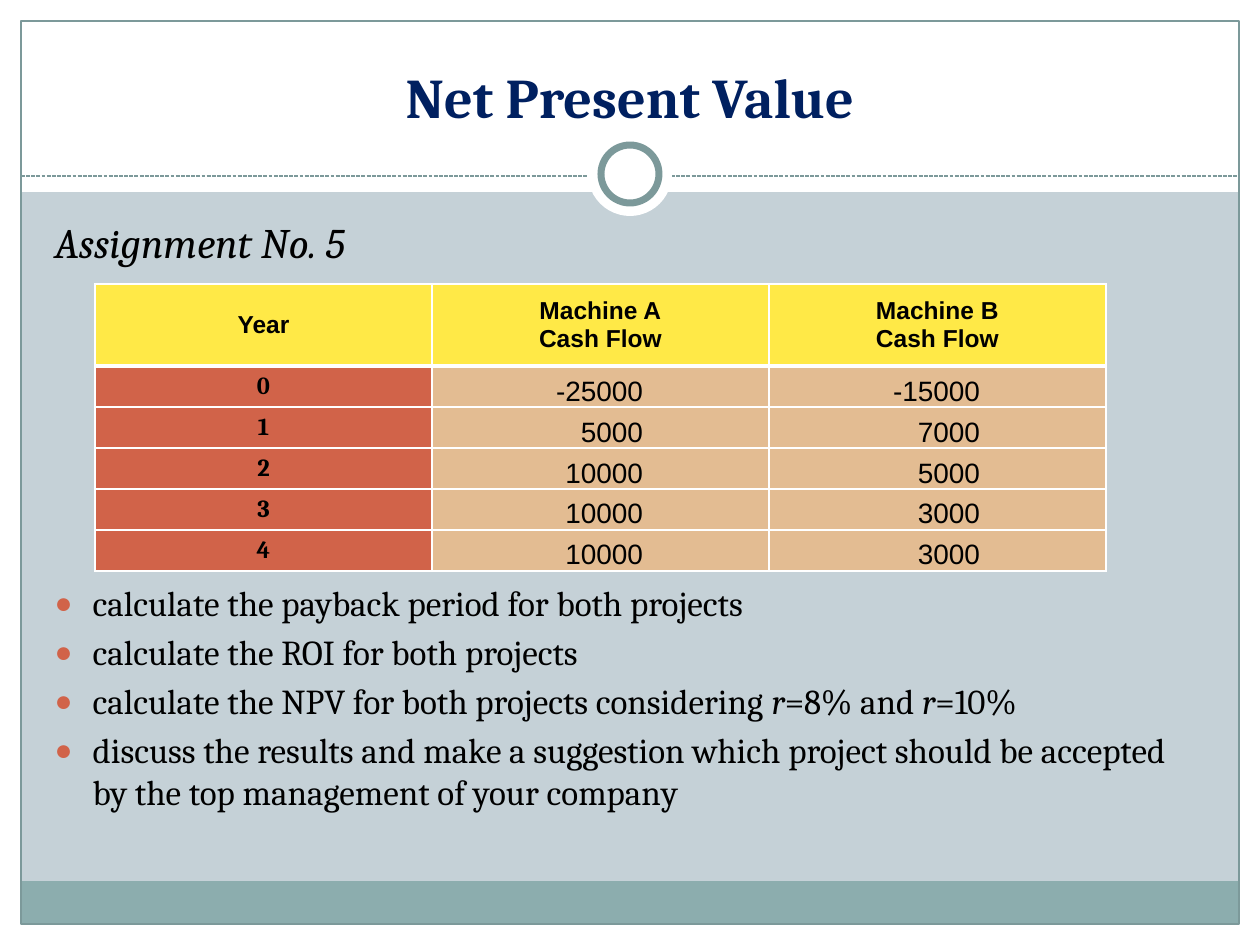
from lxml import etree
from pptx import Presentation
from pptx.dml.color import RGBColor
from pptx.enum.dml import MSO_LINE
from pptx.enum.shapes import MSO_CONNECTOR, MSO_SHAPE
from pptx.enum.text import MSO_ANCHOR, MSO_AUTO_SIZE, PP_ALIGN
from pptx.oxml.ns import qn
from pptx.util import Emu, Pt

RECTANGLE, ELLIPSE = MSO_SHAPE.RECTANGLE, MSO_SHAPE.OVAL
STRAIGHT, DASH = MSO_CONNECTOR.STRAIGHT, MSO_LINE.SQUARE_DOT
MIDDLE, BOTTOM = MSO_ANCHOR.MIDDLE, MSO_ANCHOR.BOTTOM
CENTER, RIGHT = PP_ALIGN.CENTER, PP_ALIGN.RIGHT
NO_FIT = MSO_AUTO_SIZE.NONE

PX_PER_INCH = 126
PAGE_W, PAGE_H = 1260, 945
SERIF, SANS = "Cambria", "Arial"
COLORS = {
    "page": "C5D1D7", "white": "FFFFFF", "footer": "8CADAE", "line": "7C999A",
    "title": "002060", "text": "000000", "accent": "D16349",
    "header": "FFE947", "value": "E3BC92",
}
HEADERS = [["Year"], ["Machine A", "Cash Flow"], ["Machine B", "Cash Flow"]]
CASH_FLOWS = [
    ("0", "-25000", "-15000"),
    ("1", "5000", "7000"),
    ("2", "10000", "5000"),
    ("3", "10000", "3000"),
    ("4", "10000", "3000"),
]
# Each task is a list of (text, italic) spans
TASKS = [
    [("calculate the payback period for both projects", False)],
    [("calculate the ROI for both projects", False)],
    [("calculate the NPV for both projects considering ", False), ("r", True),
     ("=8% and ", False), ("r", True), ("=10%", False)],
    [("discuss the results and make a suggestion which project should be "
      "accepted by the top management of your company", False)],
]


def px(length):
    return Emu(round(length * 914400 / PX_PER_INCH))


def color(name):
    return RGBColor.from_string(COLORS[name])


def add_span(para, text, size, font=SERIF, shade="text", bold=False, italic=False):
    span = para.add_run()
    span.text = text
    span.font.size = Pt(size)
    span.font.name = font
    span.font.color.rgb = color(shade)
    span.font.bold = bold
    span.font.italic = italic


def add_block(page, kind, box, fill=None, line_width=None):
    block = page.shapes.add_shape(kind, *map(px, box))
    block.shadow.inherit = False
    if fill:
        block.fill.solid()
        block.fill.fore_color.rgb = color(fill)
    else:
        block.fill.background()
    if line_width:
        block.line.color.rgb = color("line")
        block.line.width = Pt(line_width)
    else:
        block.line.fill.background()


def place(holder, box):
    """Move a placeholder to the box and in front of the decoration."""
    holder.left, holder.top, holder.width, holder.height = map(px, box)
    holder.element.getparent().append(holder.element)
    frame = holder.text_frame
    frame.word_wrap = True
    frame.auto_size = NO_FIT
    return frame


def add_decoration(page, box):
    left, top, width, height = box
    margin, band, rule_y = 21, 43, 176
    inner_w, inner_h = width - 2 * margin, height - 2 * margin
    right, bottom = left + width - margin, top + height - margin
    # White margins and title area
    for part in [(left, bottom, width, margin), (left, top, width, 192),
                 (left, top, margin, height), (right, top, margin, height)]:
        add_block(page, RECTANGLE, part, "white")
    # Footer band and outer frame
    add_block(page, RECTANGLE, (left + margin, bottom - band, inner_w, band), "footer")
    add_block(page, RECTANGLE, (left + margin, top + margin, inner_w, inner_h),
              line_width=0.75)
    # Dashed rule under the title
    rule = page.shapes.add_connector(
        STRAIGHT, px(left + margin), px(top + rule_y), px(right), px(top + rule_y))
    rule.line.color.rgb = color("line")
    rule.line.width = Pt(0.75)
    rule.line.dash_style = DASH
    etree.SubElement(rule.element.spPr, qn("a:effectLst"))
    # Ring on the rule
    center_x, center_y = left + width // 2, top + 174
    for size, line_width in [(84, None), (58, 4)]:
        ring = (center_x - size // 2, center_y - size // 2, size, size)
        add_block(page, ELLIPSE, ring, "white", line_width)


def add_title(page, box):
    frame = place(page.shapes.title, box)
    frame.vertical_anchor = BOTTOM
    para = frame.paragraphs[0]
    para.alignment = CENTER
    add_span(para, "Net Present Value", 32, shade="title", bold=True)


def set_bullet(para):
    properties = para._p.get_or_add_pPr()
    properties.set("marL", str(px(38)))
    properties.set("indent", str(px(-38)))
    shade = etree.SubElement(properties, qn("a:buClr"))
    etree.SubElement(shade, qn("a:srgbClr"), val=COLORS["accent"])
    etree.SubElement(properties, qn("a:buSzPct"), val="85000")
    etree.SubElement(properties, qn("a:buFont"), typeface=SANS)
    etree.SubElement(properties, qn("a:buChar"), char="●")


def add_body(page, box):
    frame = place(page.placeholders[1], box)
    # Heading without a bullet
    heading = frame.paragraphs[0]
    properties = heading._p.get_or_add_pPr()
    properties.set("marL", "0")
    properties.set("indent", "0")
    etree.SubElement(properties, qn("a:buNone"))
    heading.space_before = Pt(0)
    add_span(heading, "Assignment No. 5", 24, italic=True)
    # Tasks, the first one set below the table
    for number, task in enumerate(TASKS):
        para = frame.add_paragraph()
        set_bullet(para)
        para.space_before = Pt(4 if number else 180)
        for text, italic in task:
            add_span(para, text, 20, italic=italic)


def style_cell(cell, fill, anchor, bottom_width=1):
    properties = cell._tc.get_or_add_tcPr()
    for side in ("L", "R", "T", "B"):
        width = bottom_width if side == "B" else 1
        border = etree.SubElement(properties, qn(f"a:ln{side}"), w=str(Pt(width)))
        paint = etree.SubElement(border, qn("a:solidFill"))
        etree.SubElement(paint, qn("a:srgbClr"), val=COLORS["white"])
    cell.fill.solid()
    cell.fill.fore_color.rgb = color(fill)
    cell.vertical_anchor = anchor
    cell.margin_left = cell.margin_right = px(9)
    cell.margin_top = cell.margin_bottom = 0


def add_cash_flow_table(page, box):
    header_h = 82
    table = page.shapes.add_table(
        len(CASH_FLOWS) + 1, len(HEADERS), *map(px, box)).table
    for column in table.columns:
        column.width = px(box[2] // len(HEADERS))
    for number, row in enumerate(table.rows):
        row.height = px((box[3] - header_h) // len(CASH_FLOWS) if number else header_h)
    # Header row
    for column, lines in enumerate(HEADERS):
        cell = table.cell(0, column)
        style_cell(cell, "header", MIDDLE, bottom_width=3)
        for number, line in enumerate(lines):
            frame = cell.text_frame
            para = frame.add_paragraph() if number else frame.paragraphs[0]
            para.alignment = CENTER
            add_span(para, line, 14, SANS, bold=True)
    # Years centred, amounts flush right inside their columns
    for row, values in enumerate(CASH_FLOWS, 1):
        for column, value in enumerate(values):
            cell = table.cell(row, column)
            para = cell.text_frame.paragraphs[0]
            if column == 0:
                style_cell(cell, "accent", MIDDLE)
                para.alignment = CENTER
                add_span(para, value, 14, bold=True)
            else:
                style_cell(cell, "value", BOTTOM)
                cell.margin_right = px(126)
                para.alignment = RIGHT
                add_span(para, value, 16, SANS)


def main():
    deck = Presentation()
    deck.slide_width, deck.slide_height = px(PAGE_W), px(PAGE_H)
    page = deck.slides.add_slide(deck.slide_layouts[1])
    page.background.fill.solid()
    page.background.fill.fore_color.rgb = color("page")
    add_decoration(page, (0, 0, PAGE_W, PAGE_H))
    add_title(page, (42, 32, 1176, 104))
    add_body(page, (42, 210, 1154, 630))
    add_cash_flow_table(page, (95, 284, 1011, 287))
    deck.save("out.pptx")


if __name__ == "__main__":
    main()
